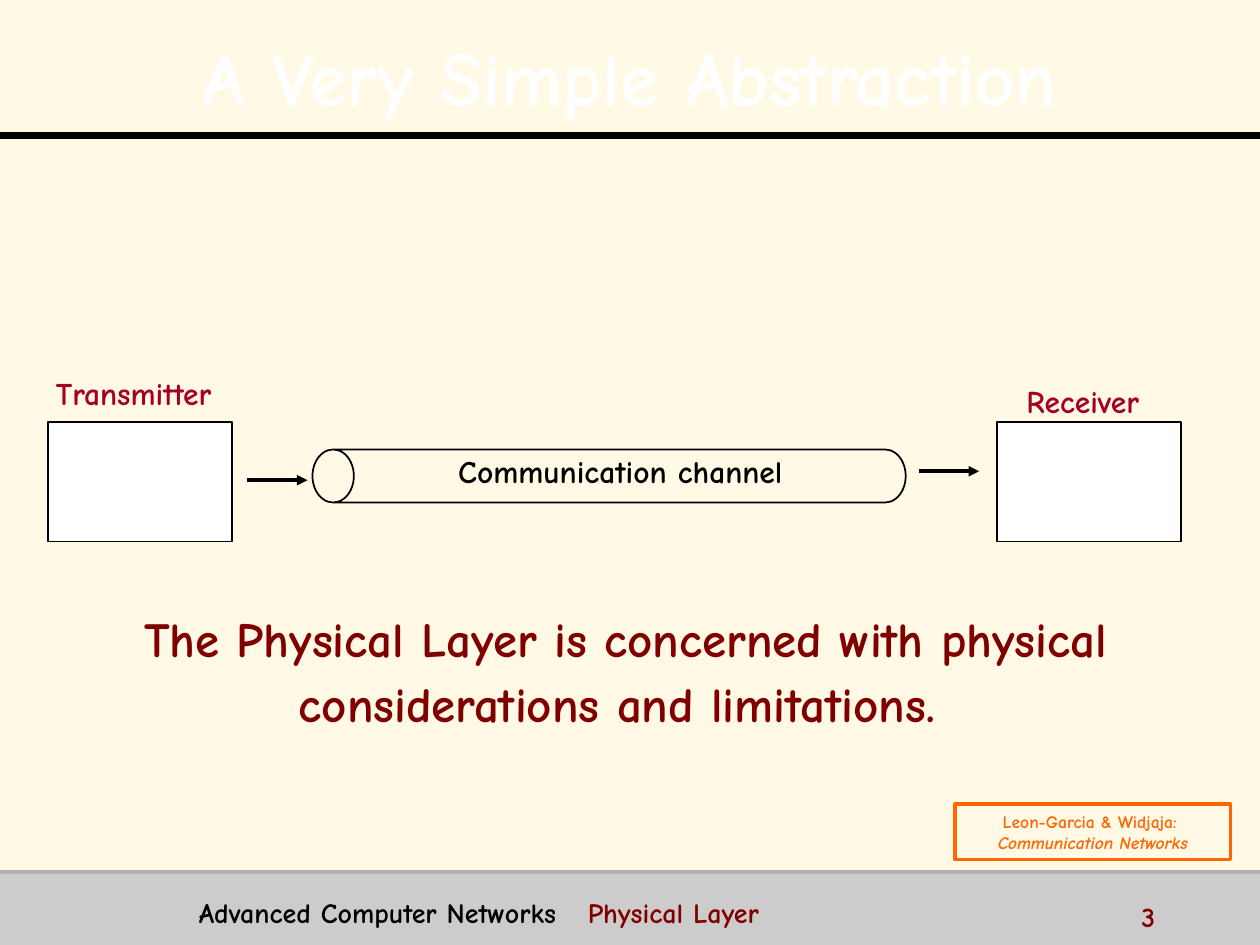
import pptx
import pptx.dml.color
import pptx.enum.shapes
import pptx.enum.text
import pptx.oxml
import pptx.oxml.ns
import pptx.util
from lxml import etree

Cm = pptx.util.Cm
Pt = pptx.util.Pt
RGBColor = pptx.dml.color.RGBColor
SHAPE = pptx.enum.shapes.MSO_SHAPE
ANCHOR = pptx.enum.text.MSO_ANCHOR
ALIGN = pptx.enum.text.PP_ALIGN
qn = pptx.oxml.ns.qn

CREAM = RGBColor(0xFF, 0xF9, 0xE6)
WHITE = RGBColor(0xFF, 0xFF, 0xFF)
BLACK = RGBColor(0x00, 0x00, 0x00)
FOOTER_GREY = RGBColor(0xCC, 0xCC, 0xCC)
RULE_GREY = RGBColor(0xB2, 0xB2, 0xB2)
CRIMSON = RGBColor(0xA5, 0x00, 0x21)
MAROON = RGBColor(0x80, 0x00, 0x00)
ORANGE = RGBColor(0xFF, 0x66, 0x00)
FONT = "Comic Neue"
WIDTH, HEIGHT = 25.4, 19.05

TEXT_SHADOW = (
    '<a:effectLst %s><a:outerShdw dist="35921" dir="2700000" algn="ctr">'
    '<a:srgbClr val="000000"/></a:outerShdw></a:effectLst>' % pptx.oxml.ns.nsdecls("a")
)


def add_run(paragraph, words, size, color, italic=None, shadow=False):
    run = paragraph.add_run()
    run.text = words
    font = run.font
    font.name, font.size, font.bold, font.italic = FONT, Pt(size), True, italic
    font.color.rgb = color
    if shadow:
        run._r.get_or_add_rPr().find(qn("a:solidFill")).addnext(
            pptx.oxml.parse_xml(TEXT_SHADOW))


def add_text(slide, box, words, size, color, align=ALIGN.CENTER,
             anchor=ANCHOR.TOP, spacing=None, shadow=False):
    frame = slide.shapes.add_textbox(*map(Cm, box)).text_frame
    frame.word_wrap = True
    frame.vertical_anchor = anchor
    paragraph = frame.paragraphs[0]
    paragraph.alignment = align
    paragraph.line_spacing = spacing
    add_run(paragraph, words, size, color, shadow=shadow)
    return paragraph


def add_block(slide, kind, box, fill=None, outline=None, weight=1):
    block = slide.shapes.add_shape(kind, *map(Cm, box))
    block.shadow.inherit = False
    if fill is None:
        block.fill.background()
    else:
        block.fill.solid()
        block.fill.fore_color.rgb = fill
    if outline is None:
        block.line.fill.background()
    else:
        block.line.color.rgb = outline
        block.line.width = Pt(weight)
    return block


def add_line(slide, left, top, length, color, weight, arrow=False):
    line = slide.shapes.add_connector(
        pptx.enum.shapes.MSO_CONNECTOR.STRAIGHT,
        Cm(left), Cm(top), Cm(left + length), Cm(top))
    line.line.color.rgb = color
    line.line.width = Pt(weight)
    if arrow:
        etree.SubElement(line.line._get_or_add_ln(), qn("a:tailEnd"), type="triangle")
    etree.SubElement(line._element.spPr, qn("a:effectLst"))


def add_heading(slide, box, words):
    left, top, width, height = box
    add_line(slide, left, top + height, width, BLACK, 4)
    add_text(slide, (left + 0.5, top + 0.33, width - 1, 2.21), words, 44, WHITE,
             anchor=ANCHOR.MIDDLE, spacing=1.1, shadow=True)


def add_station(slide, box, name, label_rise):
    left, top, width, height = box
    add_block(slide, SHAPE.RECTANGLE, box, WHITE, BLACK)
    add_text(slide, (left - 0.13, top - label_rise, width, 1.02), name, 18, CRIMSON)


def add_channel(slide, box, words):
    left, top, width, height = box
    # The can stands upright before it is turned onto its side
    upright = (left + (width - height) / 2, top - (width - height) / 2, height, width)
    pipe = add_block(slide, SHAPE.CAN, upright, outline=BLACK)
    pipe.adjustments[0] = 0.78
    pipe.rotation = 270
    add_text(slide, (left + 2.04, top - 0.08, 8.33, 1.02), words, 18, BLACK)


def add_diagram(slide, box):
    left, top, width, height = box
    station_width = 3.71
    add_station(slide, (left, top, station_width, height), "Transmitter", 1.09)
    add_station(slide, (left + width - station_width, top, station_width, height),
                "Receiver", 0.94)
    add_channel(slide, (left + 5.33, top + 0.55, 11.96, 1.07), "Communication channel")
    add_line(slide, left + 4.01, top + 1.17, 1.22, BLACK, 2, arrow=True)
    add_line(slide, left + 17.55, top + 0.99, 1.22, BLACK, 2, arrow=True)


def add_citation(slide, box, authors, title):
    frame = add_block(slide, SHAPE.RECTANGLE, box, outline=ORANGE, weight=2).text_frame
    frame.word_wrap = True
    frame.vertical_anchor = ANCHOR.MIDDLE
    for paragraph, words, italic in ((frame.paragraphs[0], authors, None),
                                     (frame.add_paragraph(), title, True)):
        paragraph.alignment = ALIGN.CENTER
        add_run(paragraph, words, 10, ORANGE, italic)


def add_footer(slide, box, course, topic, number):
    left, top, width, height = box
    add_block(slide, SHAPE.RECTANGLE, box, FOOTER_GREY)
    add_line(slide, left, top, width, RULE_GREY, 2)
    paragraph = add_text(slide, (left + 3.76, top + 0.35, 18.3, 0.79),
                         course, 16, BLACK, ALIGN.LEFT)
    # A tab stop sets the topic apart from the course
    tabs = etree.SubElement(paragraph._p.get_or_add_pPr(), qn("a:tabLst"))
    etree.SubElement(tabs, qn("a:tab"), pos=str(Cm(7.84)), algn="l")
    add_run(paragraph, "\t" + topic, 16, MAROON)
    add_text(slide, (left + 22.76, top + 0.43, 2.54, 0.64), number, 16, MAROON, ALIGN.LEFT)


def main():
    deck = pptx.Presentation()
    deck.slide_width, deck.slide_height = Cm(WIDTH), Cm(HEIGHT)
    slide = deck.slides.add_slide(deck.slide_layouts[6])
    slide.background.fill.solid()
    slide.background.fill.fore_color.rgb = CREAM

    add_heading(slide, (0, 0, WIDTH, 2.74), "A Very Simple Abstraction")
    add_diagram(slide, (0.97, 8.51, 22.84, 2.41))
    # Takeaway under the diagram
    add_text(slide, (0.41, 11.79, 24.4, 3.33),
             "The Physical Layer is concerned with physical considerations and limitations. ",
             28, MAROON, anchor=ANCHOR.MIDDLE, spacing=1.1, shadow=True)
    add_citation(slide, (19.25, 16.21, 5.56, 1.12),
                 "Leon-Garcia & Widjaja: ", "Communication Networks")
    add_footer(slide, (0, 17.58, WIDTH, HEIGHT - 17.58),
               "Advanced Computer Networks", "Physical Layer", "3")
    deck.save("out.pptx")


if __name__ == "__main__":
    main()
